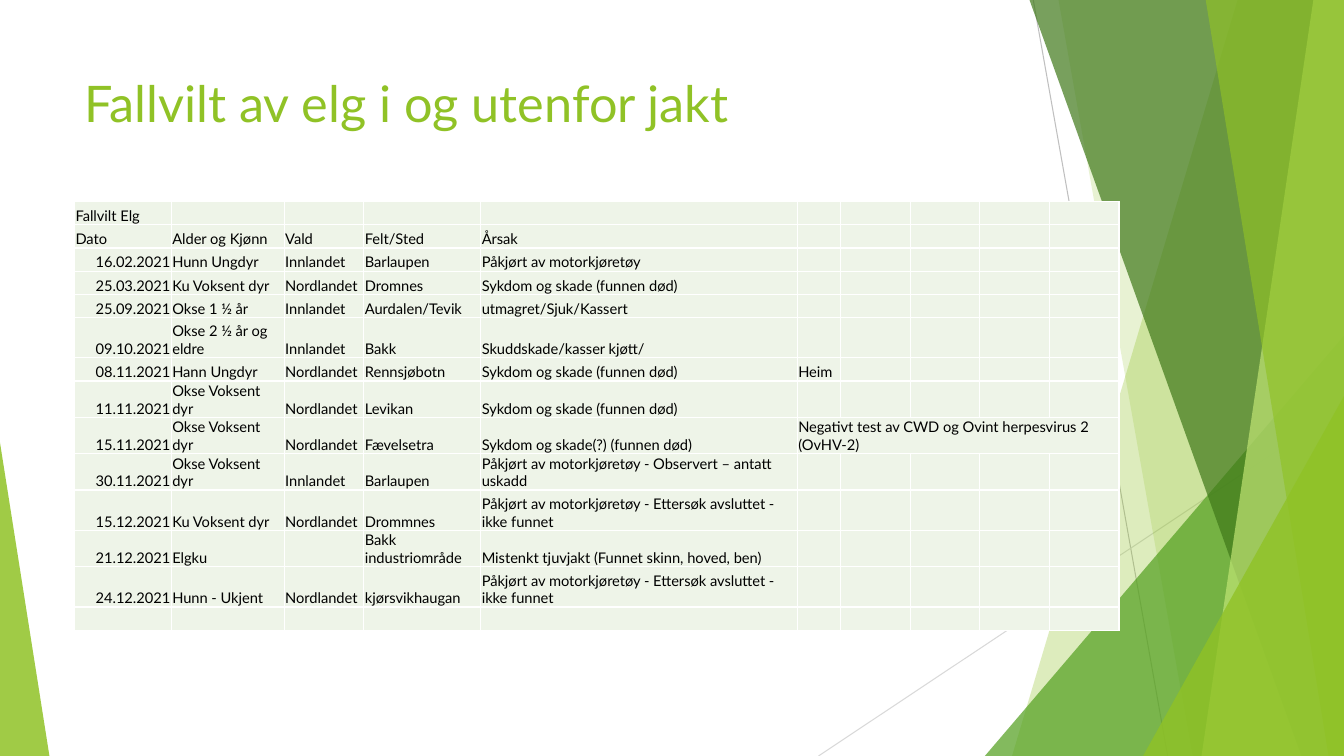
"""Build a slide that lists fallen moose found in and outside the hunt."""
from lxml.etree import SubElement
from pptx import Presentation
from pptx.dml.color import RGBColor
from pptx.enum.shapes import MSO_CONNECTOR, MSO_SHAPE
from pptx.enum.text import MSO_ANCHOR, MSO_AUTO_SIZE, PP_ALIGN
from pptx.oxml.ns import qn
from pptx.util import Inches, Pt

COLORS = {
    "lime": "90C226", "green": "54A021", "forest": "3F7819", "pale": "C0E474",
    "gray": "BFBFBF", "silver": "D9D9D9", "cell": "EEF4E8", "white": "FFFFFF", "black": "000000",
}
COLUMN_WIDTHS = [7.2, 8.4, 5.93, 8.7, 23.55, 3.23] + [5.18] * 4
LOW_ROW, TALL_ROW = 3.07, 5.33
TALL_ROWS = {5, 10, 12}
RECORDS = [
    ["Fallvilt Elg"],
    ["Dato", "Alder og Kjønn", "Vald", "Felt/Sted", "Årsak"],
    ["16.02.2021", "Hunn Ungdyr", "Innlandet", "Barlaupen", "Påkjørt av motorkjøretøy"],
    ["25.03.2021", "Ku Voksent dyr", "Nordlandet", "Dromnes", "Sykdom og skade (funnen død)"],
    ["25.09.2021", "Okse 1 ½ år", "Innlandet", "Aurdalen/Tevik", "utmagret/Sjuk/Kassert"],
    ["09.10.2021", "Okse 2 ½ år og eldre", "Innlandet", "Bakk", "Skuddskade/kasser kjøtt/"],
    ["08.11.2021", "Hann Ungdyr", "Nordlandet", "Rennsjøbotn", "Sykdom og skade (funnen død)", "Heim"],
    ["11.11.2021", "Okse Voksent dyr", "Nordlandet", "Levikan", "Sykdom og skade (funnen død)"],
    ["15.11.2021", "Okse Voksent dyr", "Nordlandet", "Fævelsetra", "Sykdom og skade(?) (funnen død)",
     "Negativt test av CWD og Ovint herpesvirus 2 (OvHV-2)"],
    ["30.11.2021", "Okse Voksent dyr", "Innlandet", "Barlaupen",
     "Påkjørt av motorkjøretøy - Observert – antatt uskadd"],
    ["15.12.2021", "Ku Voksent dyr", "Nordlandet", "Drommnes",
     "Påkjørt av motorkjøretøy - Ettersøk avsluttet - ikke funnet"],
    ["21.12.2021", "Elgku", "", "Bakk industriområde", "Mistenkt tjuvjakt (Funnet skinn, hoved, ben)"],
    ["24.12.2021", "Hunn - Ukjent", "Nordlandet", "kjørsvikhaugan",
     "Påkjørt av motorkjøretøy - Ettersøk avsluttet - ikke funnet"],
    [],
]


class Page:
    """Draw styled elements on one slide, with lengths in percent of its size."""

    font_name = "Lato"

    def __init__(self, deck):
        self.deck = deck
        self.slide = deck.slides.add_slide(deck.slide_layouts[5])
        self.backdrop = self.slide.shapes.add_group_shape().shapes

    def across(self, share):
        return round(self.deck.slide_width * share / 100)

    def down(self, share):
        return round(self.deck.slide_height * share / 100)

    def frame(self, left, top, width, height):
        return self.across(left), self.down(top), self.across(width), self.down(height)

    def add_text(self, para, text, size, color):
        span = para.add_run()
        span.text = text
        span.font.name = self.font_name
        span.font.size = Pt(size)
        span.font.color.rgb = RGBColor.from_string(COLORS[color])

    def line(self, left, top, right, bottom, color):
        connector = self.backdrop.add_connector(
            MSO_CONNECTOR.STRAIGHT, *self.frame(left, top, right, bottom))
        connector.line.color.rgb = RGBColor.from_string(COLORS[color])
        connector.line.width = Pt(0.75)
        SubElement(connector._element.spPr, qn("a:effectLst"))

    def paint(self, shape, color, opacity):
        shape.shadow.inherit = False
        shape.fill.solid()
        shape.fill.fore_color.rgb = RGBColor.from_string(COLORS[color])
        shape.line.fill.background()
        tint = shape._element.spPr.find(qn("a:solidFill"))[0]
        SubElement(tint, qn("a:alpha"), val=str(opacity * 1000))

    def ray(self, top_left, bottom_left, color, opacity):
        corners = [(100, -0.11), (100, 100), (bottom_left, 100)]
        outline = self.backdrop.build_freeform(self.across(top_left), self.down(-0.11))
        outline.add_line_segments([(self.across(x), self.down(y)) for x, y in corners])
        self.paint(outline.convert_to_shape(), color, opacity)

    def triangle(self, left, top, width, peak, color, opacity):
        shape = self.backdrop.add_shape(
            MSO_SHAPE.ISOSCELES_TRIANGLE, *self.frame(left, top, width, 100 - top))
        shape.adjustments[0] = peak
        self.paint(shape, color, opacity)

    def title(self, text, left, top, width, height):
        box = self.slide.shapes.title
        self.slide.shapes._spTree.append(box._element)
        box.left, box.top, box.width, box.height = self.frame(left, top, width, height)
        box.text_frame.auto_size = MSO_AUTO_SIZE.NONE
        box.text_frame.vertical_anchor = MSO_ANCHOR.TOP
        para = box.text_frame.paragraphs[0]
        para.alignment = PP_ALIGN.LEFT
        self.add_text(para, text, 36, "lime")

    def cell(self, cell, text, alignment):
        cell.margin_left = cell.margin_right = cell.margin_top = Inches(0.01)
        cell.margin_bottom = 0
        cell.vertical_anchor = MSO_ANCHOR.BOTTOM
        properties = cell._tc.get_or_add_tcPr()
        for side in ("lnL", "lnR", "lnT", "lnB"):
            border = SubElement(properties, qn(f"a:{side}"), w=str(Pt(1)))
            SubElement(SubElement(border, qn("a:solidFill")), qn("a:srgbClr"), val=COLORS["white"])
        cell.fill.solid()
        cell.fill.fore_color.rgb = RGBColor.from_string(COLORS["cell"])
        para = cell.text_frame.paragraphs[0]
        para.alignment = alignment
        if text:
            self.add_text(para, text, 10.5, "black")
        else:
            SubElement(para._p, qn("a:endParaRPr"), sz="1050")

    def table(self, records, left, top):
        heights = [TALL_ROW if row in TALL_ROWS else LOW_ROW for row in range(len(records))]
        grid = self.slide.shapes.add_table(
            len(records), len(COLUMN_WIDTHS),
            *self.frame(left, top, sum(COLUMN_WIDTHS), sum(heights))).table
        grid.first_row = grid.horz_banding = False
        for column, width in zip(grid.columns, COLUMN_WIDTHS):
            column.width = self.across(width)
        for row, (record, height) in enumerate(zip(records, heights)):
            grid.rows[row].height = self.down(height)
            for column in range(len(COLUMN_WIDTHS)):
                is_date = column == 0 and row > 1
                text = record[column] if column < len(record) else ""
                self.cell(grid.cell(row, column), text, PP_ALIGN.RIGHT if is_date else PP_ALIGN.LEFT)
        return grid


def main():
    deck = Presentation()
    deck.slide_width, deck.slide_height = Inches(13.33), Inches(7.5)
    page = Page(deck)
    page.line(76.88, 0, 86.88, 100, "gray")
    page.line(100, 53.73, 60.9, 100, "silver")
    page.ray(92.1, 75.3, "lime", 30)
    page.ray(78.75, 88.73, "lime", 20)
    page.triangle(73.28, 44.4, 26.72, 1, "green", 72)
    page.ray(76.58, 96.83, "forest", 70)
    page.ray(97.73, 89.4, "pale", 70)
    page.ray(89.7, 98.85, "lime", 65)
    page.triangle(85.05, 52.4, 14.95, 1, "lime", 80)
    page.triangle(0, 58.53, 3.68, 0, "lime", 85)
    page.title("Fallvilt av elg i og utenfor jakt", 5.55, 8.93, 70.5, 11.07)
    grid = page.table(RECORDS, 5.55, 26.67)
    grid.cell(8, 5).merge(grid.cell(8, 9))
    grid.cell(5, 4).text_frame.paragraphs[0].space_after = Pt(13)
    deck.save("out.pptx")


if __name__ == "__main__":
    main()
